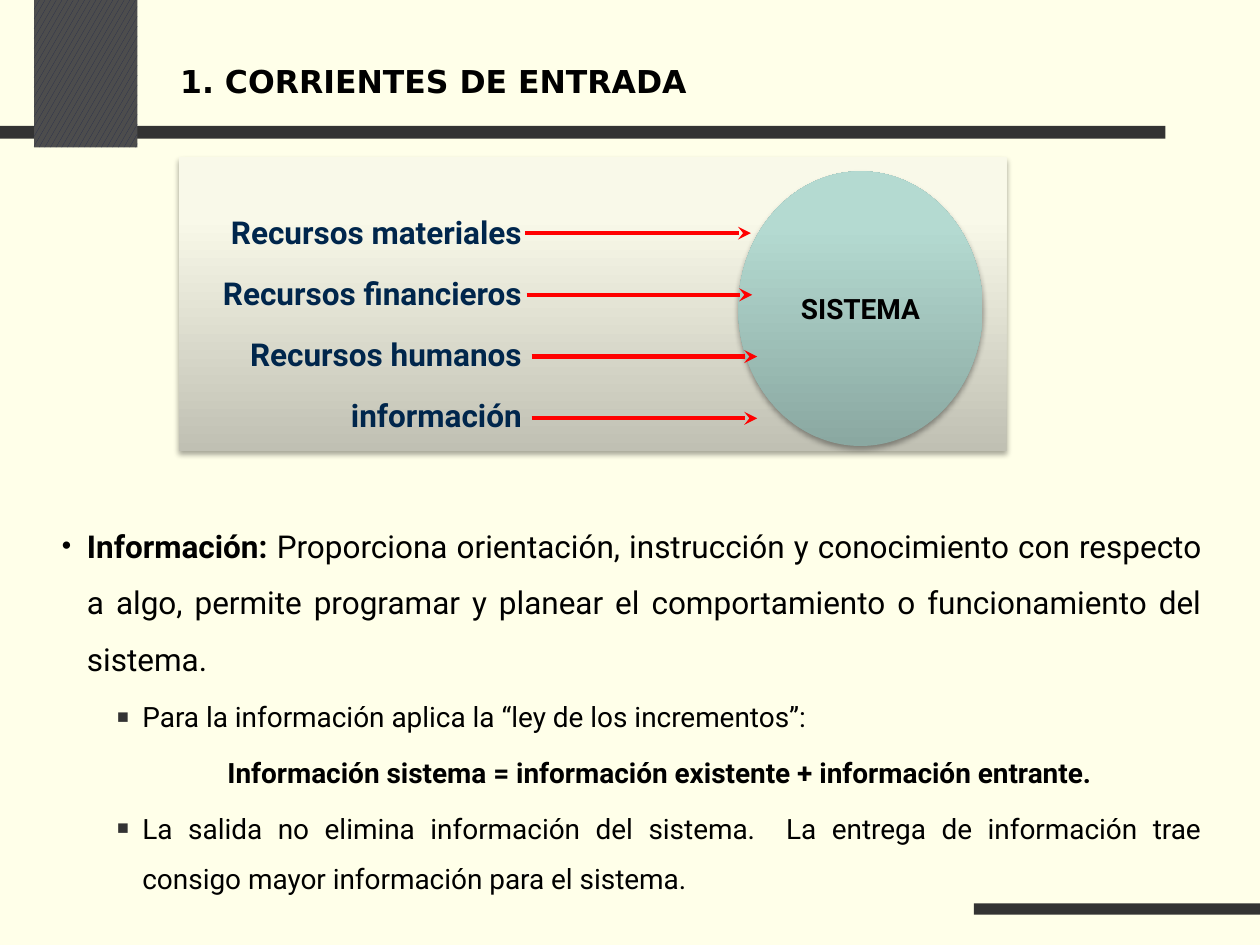
from lxml.etree import SubElement
from pptx import Presentation
from pptx.dml.color import RGBColor
from pptx.enum.dml import MSO_PATTERN
from pptx.enum.shapes import MSO_CONNECTOR, MSO_SHAPE
from pptx.enum.text import MSO_ANCHOR, MSO_AUTO_SIZE, PP_ALIGN
from pptx.oxml import parse_xml
from pptx.oxml.ns import nsdecls, qn
from pptx.util import Inches, Pt

CREAM = RGBColor(0xFF, 0xFF, 0xE9)
DARK = RGBColor(0x33, 0x33, 0x33)
GREY = RGBColor(0x4D, 0x4D, 0x4D)
SLATE = RGBColor(0x26, 0x2D, 0x4C)
BLACK = RGBColor(0, 0, 0)
NAVY = RGBColor(0x00, 0x26, 0x4C)
RED = RGBColor(0xFF, 0, 0)
PANEL_STOPS = [(0, "C0C0B3"), (80, "F9F9E9"), (100, "FAFAE9")]
CIRCLE_STOPS = [(0, "8AA8A1"), (80, "B4DAD1"), (100, "B4DBD2")]

TITLE = "1. CORRIENTES DE ENTRADA"
SYSTEM = "SISTEMA"
# input label, left end of its arrow
INPUTS = [
    ("Recursos materiales", 4.17),
    ("Recursos financieros", 4.18),
    ("Recursos humanos", 4.22),
    ("información", 4.22),
]
ARROW_TOP, ARROW_PITCH, ARROW_LENGTH = 1.85, 0.49, 1.79

# style, [(text, bold)]
BODY = [
    ("main", [("Información:", True),
              (" Proporciona orientación, instrucción y conocimiento con respecto a algo, "
               "permite programar y planear el comportamiento o funcionamiento del sistema.",
               False)]),
    ("sub", [("Para la información aplica la “ley de los incrementos”:", False)]),
    ("formula", [("Información sistema = información existente + información entrante.", True)]),
    ("sub", [("La salida no elimina información del sistema.  La entrega de información trae "
              "consigo mayor información para el sistema.", False)]),
]
STYLES = {
    "main": dict(level=0, left=0.2, size=18, align=PP_ALIGN.JUSTIFY, bullet=("•", BLACK, 85)),
    "sub": dict(level=1, left=0.64, size=16, align=PP_ALIGN.JUSTIFY, bullet=("■", DARK, 70)),
    "formula": dict(level=1, left=0.64, size=16, align=PP_ALIGN.CENTER, bullet=None),
}


def box(*lengths):
    return [Inches(v) for v in lengths]


def place(sp, *lengths):
    sp.left, sp.top, sp.width, sp.height = box(*lengths)


def format_font(font, **values):
    for name, value in {"name": "Roboto", "bold": True, **values}.items():
        if name == "color":
            font.color.rgb = value
        else:
            setattr(font, name, value)


def add_plain(shapes, kind, *lengths):
    sp = shapes.add_shape(kind, *box(*lengths))
    sp.shadow.inherit = False
    sp.line.fill.background()
    return sp


def add_shaded(shapes, kind, stops, *lengths):
    """Shape with a bottom-to-top gradient and a soft shadow below."""
    sp = add_plain(shapes, kind, *lengths)
    gs = "".join(f'<a:gs pos="{pos * 1000}"><a:srgbClr val="{rgb}"/></a:gs>'
                 for pos, rgb in stops)
    sp_pr = sp._element.spPr
    sp_pr.find(qn("a:prstGeom")).addnext(parse_xml(
        f'<a:gradFill {nsdecls("a")} rotWithShape="1"><a:gsLst>{gs}</a:gsLst>'
        '<a:lin ang="16200000" scaled="0"/></a:gradFill>'))
    sp_pr.find(qn("a:effectLst")).append(parse_xml(
        f'<a:outerShdw {nsdecls("a")} blurRad="{Pt(3.1)}" dist="{Pt(1.8)}" dir="5400000" '
        'rotWithShape="0"><a:srgbClr val="000000"><a:alpha val="35000"/></a:srgbClr>'
        '</a:outerShdw>'))
    return sp


def add_arrow(shapes, x, y):
    line = shapes.add_connector(MSO_CONNECTOR.STRAIGHT, *box(x, y, x + ARROW_LENGTH, y))
    line.line.color.rgb = RED
    line.line.width = Pt(2.5)
    SubElement(line.line._get_or_add_ln(), qn("a:tailEnd"), type="stealth")
    SubElement(line._element.spPr, qn("a:effectLst"))


def set_bullet(p, left, bullet):
    p_pr = p._p.get_or_add_pPr()
    p_pr.set("marL", str(Inches(left)))
    p_pr.set("indent", str(Inches(-0.2)))
    if bullet is None:
        SubElement(p_pr, qn("a:buNone"))
        return
    char, color, percent = bullet
    SubElement(SubElement(p_pr, qn("a:buClr")), qn("a:srgbClr"), val=str(color))
    SubElement(p_pr, qn("a:buSzPct"), val=str(percent * 1000))
    SubElement(p_pr, qn("a:buChar"), char=char)


def paragraphs(tf, items):
    """Pair each item with its paragraph, adding paragraphs as needed."""
    for i, item in enumerate(items):
        yield i, tf.add_paragraph() if i else tf.paragraphs[0], item


def add_frame(slide):
    for lengths in [(0, 1, 9.25, 0.1), (7.73, 7.17, 2.27, 0.09)]:
        bar = add_plain(slide.shapes, MSO_SHAPE.RECTANGLE, *lengths)
        bar.fill.solid()
        bar.fill.fore_color.rgb = DARK
    block = add_plain(slide.shapes, MSO_SHAPE.RECTANGLE, 0.27, 0, 0.82, 1.17)
    block.fill.patterned()
    block.fill.pattern = MSO_PATTERN.LARGE_CONFETTI
    block.fill.fore_color.rgb = SLATE
    block.fill.back_color.rgb = GREY


def fill_title(title):
    place(title, 1.33, 0.42, 8.07, 0.42)
    tf = title.text_frame
    tf.text = TITLE
    tf.auto_size = MSO_AUTO_SIZE.NONE
    tf.vertical_anchor = MSO_ANCHOR.BOTTOM
    p = tf.paragraphs[0]
    p.alignment = PP_ALIGN.LEFT
    format_font(p.runs[0].font, name="DejaVu Sans", size=Pt(18), color=BLACK)


def fill_body(body):
    place(body, 0.39, 3.98, 9.25, 3.25)
    tf = body.text_frame
    tf.auto_size = MSO_AUTO_SIZE.NONE
    for i, p, (style_name, runs) in paragraphs(tf, BODY):
        style = STYLES[style_name]
        set_bullet(p, style["left"], style["bullet"])
        p.level = style["level"]
        p.alignment = style["align"]
        p.line_spacing = 1.5
        p.space_before = Pt(3 if i else 0)
        for text, bold in runs:
            r = p.add_run()
            r.text = text
            format_font(r.font, size=Pt(style["size"]), bold=bold, color=BLACK)


def add_diagram(slide):
    shapes = slide.shapes.add_group_shape().shapes
    add_shaded(shapes, MSO_SHAPE.RECTANGLE, PANEL_STOPS, 1.42, 1.25, 6.57, 2.33)
    circle = add_shaded(shapes, MSO_SHAPE.OVAL, CIRCLE_STOPS, 5.86, 1.36, 1.94, 2.18)
    tf = circle.text_frame
    tf.text = SYSTEM
    tf.word_wrap = False
    tf.vertical_anchor = MSO_ANCHOR.MIDDLE
    tf.paragraphs[0].alignment = PP_ALIGN.CENTER
    format_font(tf.paragraphs[0].runs[0].font, size=Pt(16), color=BLACK)

    for i, (_, x) in enumerate(INPUTS):
        add_arrow(shapes, x, ARROW_TOP + i * ARROW_PITCH)

    tf = shapes.add_textbox(*box(0.92, 1.58, 3.32, 2)).text_frame
    tf.word_wrap = True
    for i, p, (label, _) in paragraphs(tf, INPUTS):
        p.alignment = PP_ALIGN.RIGHT
        p.line_spacing = 1.2
        p.space_before = Pt(9 if i else 0)
        r = p.add_run()
        r.text = label
        format_font(r.font, size=Pt(18), color=NAVY)


def main():
    prs = Presentation()
    prs.slide_width, prs.slide_height = box(10, 7.5)
    slide = prs.slides.add_slide(prs.slide_layouts[1])
    slide.background.fill.solid()
    slide.background.fill.fore_color.rgb = CREAM
    add_frame(slide)
    fill_title(slide.shapes.title)
    fill_body(slide.placeholders[1])
    add_diagram(slide)
    prs.save("out.pptx")


if __name__ == "__main__":
    main()
